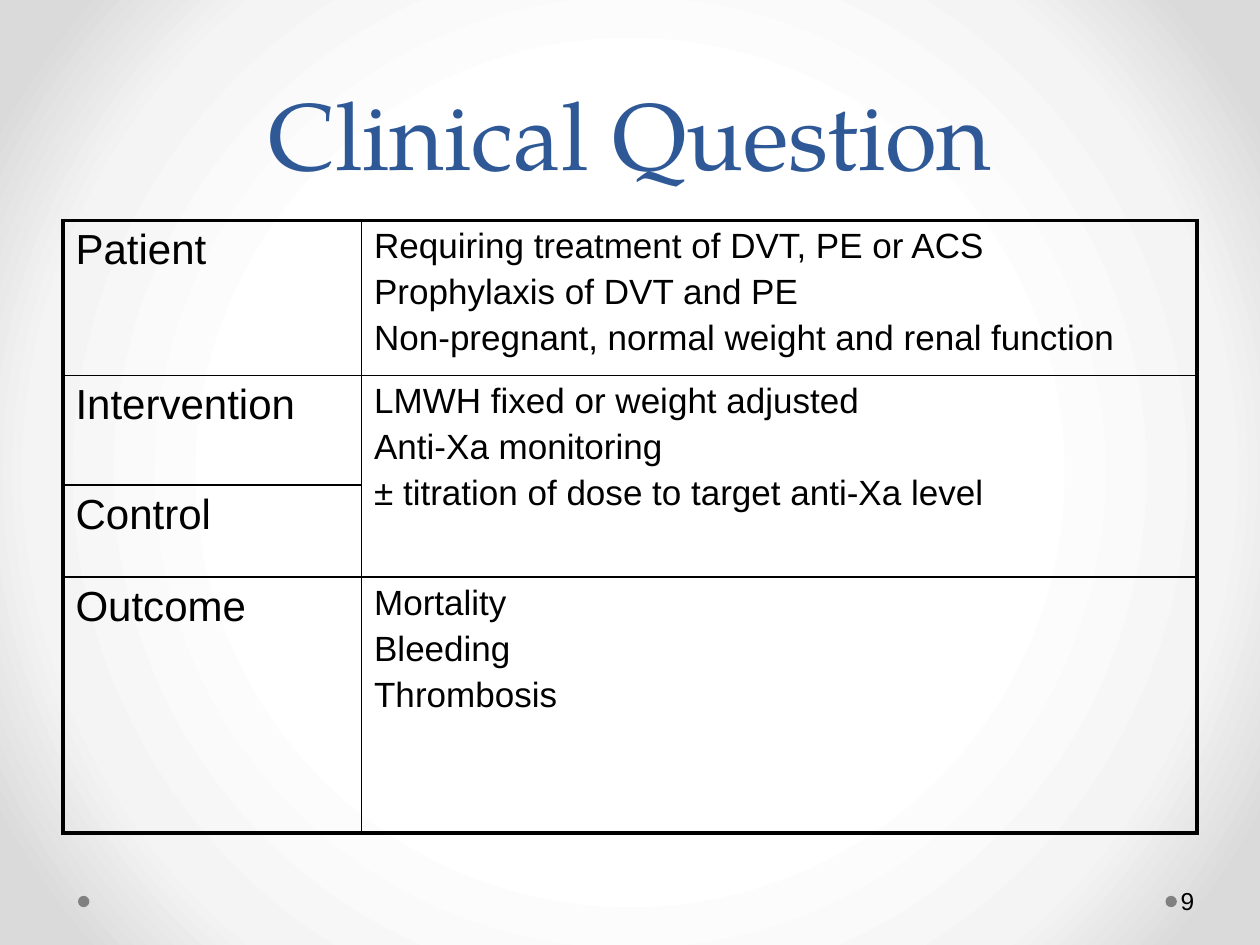
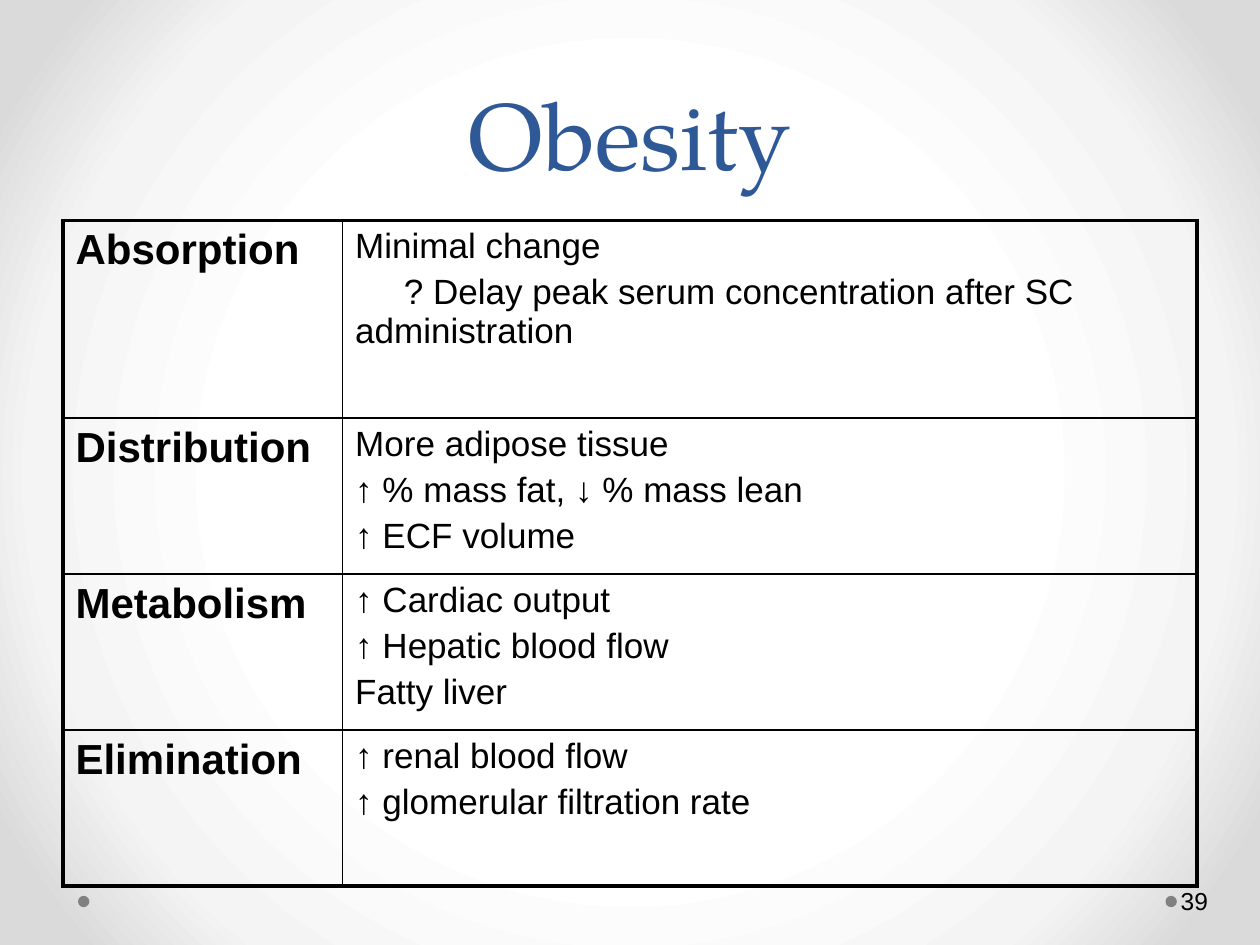
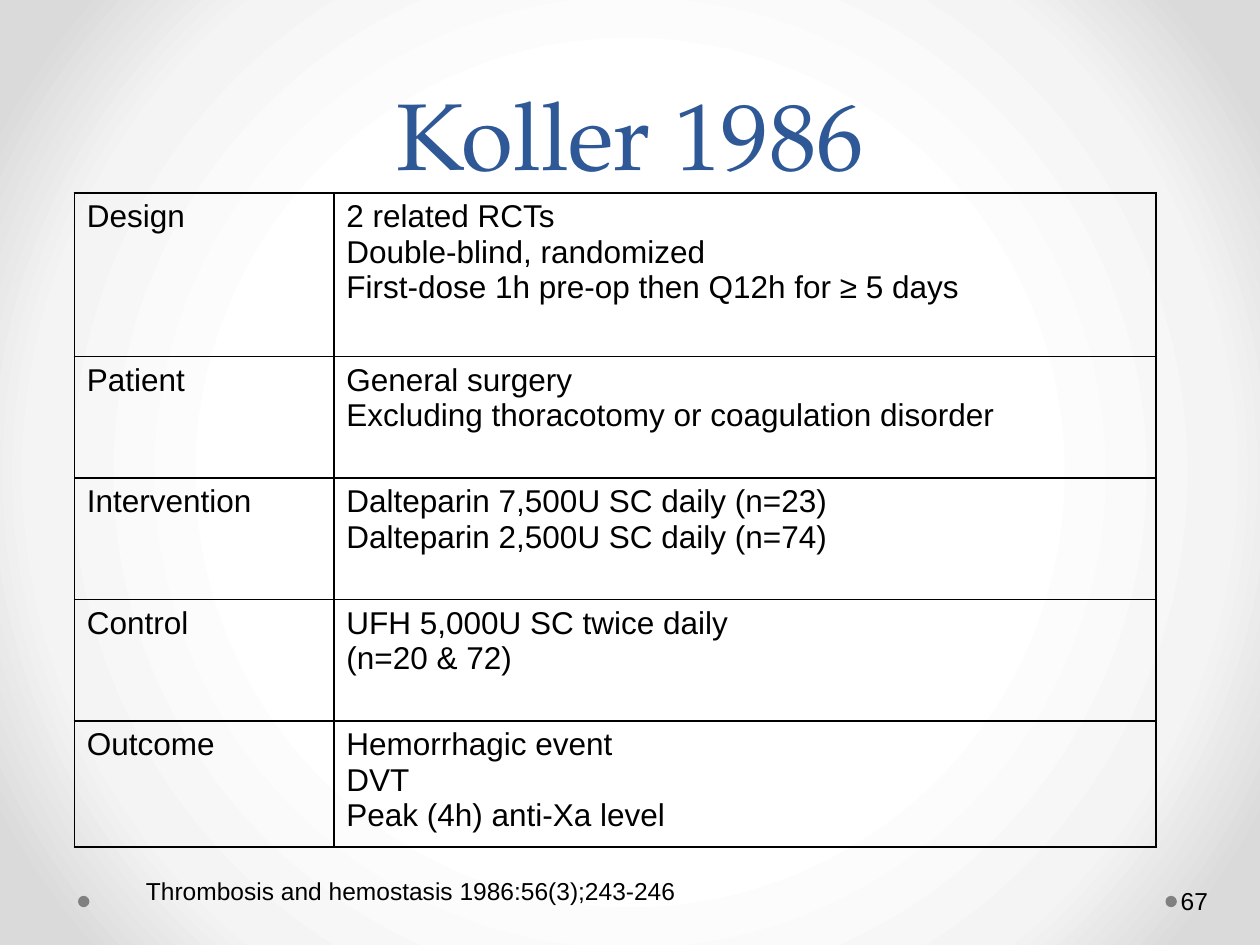
"""Build three clinical review slides, each with a title and a table."""
from dataclasses import dataclass

from lxml import etree
from pptx import Presentation
from pptx import oxml
from pptx import util as u
from pptx.dml import color
from pptx.enum import shapes, text

NAMESPACE = "http://schemas.openxmlformats.org/drawingml/2006/main"


@dataclass(frozen=True)
class Theme:
    title_color: str = "2F5897"
    text_color: str = "000000"
    dot_color: str = "808080"
    gradient: tuple = ((50, "FFFFFF"), (76, "F4F4F4"), (92, "DADADA"))
    title_font: str = "TeX Gyre Pagella"
    body_font: str = "Arial"
    title_size: float = 54
    title_leading: float = 58
    label_size: float = 24
    detail_size: float = 20
    compact_size: float = 18
    note_size: float = 14
    thin: float = 1
    thick: float = 2.25


class Deck:
    def __init__(self, theme):
        self.theme = theme
        self.presentation = Presentation()
        self.presentation.slide_width = u.Pt(720)
        self.presentation.slide_height = u.Pt(540)
        self.slide = None

    def add_slide(self, title, number):
        self.slide = self.presentation.slides.add_slide(self.presentation.slide_layouts[6])
        self.paint_background()
        for left in (666, 44.6):
            self.add_dot(left, 511.9, 6.5)
        self.add_title(title)
        frame = self.add_text(str(number), 672.5, 500.4, 43.9, 28.8)
        frame.margin_left = u.Pt(2.2)
        frame.vertical_anchor = text.MSO_ANCHOR.MIDDLE

    def paint_background(self):
        fill = self.slide.background.fill
        fill.gradient()
        stops = "".join(
            f'<a:gs pos="{position * 1000}"><a:srgbClr val="{shade}"/></a:gs>'
            for position, shade in self.theme.gradient
        )
        gradient = oxml.parse_xml(
            f'<a:gradFill xmlns:a="{NAMESPACE}" rotWithShape="1"><a:gsLst>{stops}</a:gsLst>'
            '<a:path path="circle"><a:fillToRect l="50000" t="50000" r="50000" b="50000"/>'
            "</a:path></a:gradFill>"
        )
        current = next(self.slide.element.iter(f"{{{NAMESPACE}}}gradFill"))
        current.getparent().replace(current, gradient)

    def add_dot(self, left, top, size):
        dot = self.slide.shapes.add_shape(
            shapes.MSO_SHAPE.OVAL, u.Pt(left), u.Pt(top), u.Pt(size), u.Pt(size)
        )
        dot.shadow.inherit = False
        dot.fill.solid()
        dot.fill.fore_color.rgb = color.RGBColor.from_string(self.theme.dot_color)
        dot.line.fill.background()

    def add_text(self, content, left, top, width, height):
        box = self.slide.shapes.add_textbox(u.Pt(left), u.Pt(top), u.Pt(width), u.Pt(height))
        frame = box.text_frame
        frame.word_wrap = True
        frame.text = content
        self.format_runs(frame, self.theme.note_size)
        return frame

    def add_title(self, content):
        frame = self.add_text(content, 36, 21.6, 648, 90)
        frame.vertical_anchor = text.MSO_ANCHOR.BOTTOM
        paragraph = frame.paragraphs[0]
        paragraph.alignment = text.PP_ALIGN.CENTER
        paragraph.line_spacing = u.Pt(self.theme.title_leading)
        self.format_runs(
            frame, self.theme.title_size, self.theme.title_font, self.theme.title_color
        )

    def format_runs(self, frame, size, font=None, shade=None, bold=False):
        for paragraph in frame.paragraphs:
            for run in paragraph.runs:
                run.font.size = u.Pt(size)
                run.font.name = font or self.theme.body_font
                run.font.bold = bold
                run.font.color.rgb = color.RGBColor.from_string(shade or self.theme.text_color)

    def add_table(self, left, top, columns, heights, rows, sizes, outline, spacing=0, bold=False):
        table = self.slide.shapes.add_table(
            len(heights), len(columns), u.Pt(left), u.Pt(top),
            u.Pt(sum(columns)), u.Pt(sum(heights)),
        ).table
        table.first_row = table.horz_banding = False
        for column, width in zip(table.columns, columns):
            column.width = u.Pt(width)
        for row, height in zip(table.rows, heights):
            row.height = u.Pt(height)
        last_row, last_column = len(heights) - 1, len(columns) - 1
        for i, contents in enumerate(rows):
            for j, content in enumerate(contents):
                cell = table.cell(i, j)
                outer = {"L": j == 0, "R": j == last_column, "T": i == 0, "B": i == last_row}
                self.add_borders(cell, outer, outline)
                cell.fill.background()
                if content is None:
                    table.cell(i - 1, j).merge(cell)
                    continue
                cell.text_frame.text = content
                self.format_runs(cell.text_frame, sizes[j], bold=bold and j == 0)
                for paragraph in cell.text_frame.paragraphs[1:]:
                    paragraph.space_before = u.Pt(spacing * sizes[j])
        return table

    def add_borders(self, cell, outer, outline):
        properties = cell._tc.get_or_add_tcPr()
        for side, is_outer in outer.items():
            width = outline if is_outer else self.theme.thin
            line = etree.SubElement(properties, f"{{{NAMESPACE}}}ln{side}", w=str(u.Pt(width)))
            fill = etree.SubElement(line, f"{{{NAMESPACE}}}solidFill")
            etree.SubElement(fill, f"{{{NAMESPACE}}}srgbClr", val=self.theme.text_color)

    def indent_first_line(self, paragraph, distance):
        properties = paragraph._p.get_or_add_pPr()
        properties.set("marL", "0")
        properties.set("indent", str(u.Pt(distance)))


QUESTION = [
    ("Patient", "Requiring treatment of DVT, PE or ACS\nProphylaxis of DVT and PE\n"
                "Non-pregnant, normal weight and renal function"),
    ("Intervention", "LMWH fixed or weight adjusted\nAnti-Xa monitoring\n"
                     "± titration of dose to target anti-Xa level"),
    ("Control", None),
    ("Outcome", "Mortality\nBleeding\nThrombosis"),
]
OBESITY = [
    ("Absorption", "Minimal change\n? Delay peak serum concentration after SC administration"),
    ("Distribution", "More adipose tissue\n↑ % mass fat, ↓ % mass lean\n↑ ECF volume"),
    ("Metabolism", "↑ Cardiac output\n↑ Hepatic blood flow\nFatty liver"),
    ("Elimination", "↑ renal blood flow\n↑ glomerular filtration rate"),
]
TRIAL = [
    ("Design", "2 related RCTs\nDouble-blind, randomized\n"
               "First-dose 1h pre-op then Q12h for ≥ 5 days"),
    ("Patient", "General surgery\nExcluding thoracotomy or coagulation disorder"),
    ("Intervention", "Dalteparin 7,500U SC daily (n=23)\nDalteparin 2,500U SC daily (n=74)"),
    ("Control", "UFH 5,000U SC twice daily\n(n=20 & 72)"),
    ("Outcome", "Hemorrhagic event\nDVT\nPeak (4h) anti-Xa level"),
]


def main():
    theme = Theme()
    deck = Deck(theme)
    framed = dict(
        left=36, top=126, sizes=(theme.label_size, theme.detail_size),
        outline=theme.thick, spacing=0.2,
    )

    deck.add_slide("Clinical Question", 9)
    deck.add_table(columns=(170.6, 477.4), heights=(88.6, 62.6, 52.6, 146.2),
                   rows=QUESTION, **framed)

    deck.add_slide("Obesity", 39)
    table = deck.add_table(columns=(159.8, 488.2), heights=(113, *[89.1] * 3),
                           rows=OBESITY, bold=True, **framed)
    deck.indent_first_line(table.cell(0, 1).text_frame.paragraphs[1], 27.8)

    deck.add_slide("Koller 1986", 67)
    deck.add_table(42.5, 110.2, (148.3, 469.7), (93.6, *[69.4] * 3, 72), TRIAL,
                   (theme.compact_size, theme.compact_size), theme.thin)
    deck.add_text("Thrombosis and hemostasis 1986:56(3);243-246", 76.3, 496.8, 323.3, 24.5)

    deck.presentation.save("out.pptx")


if __name__ == "__main__":
    main()
